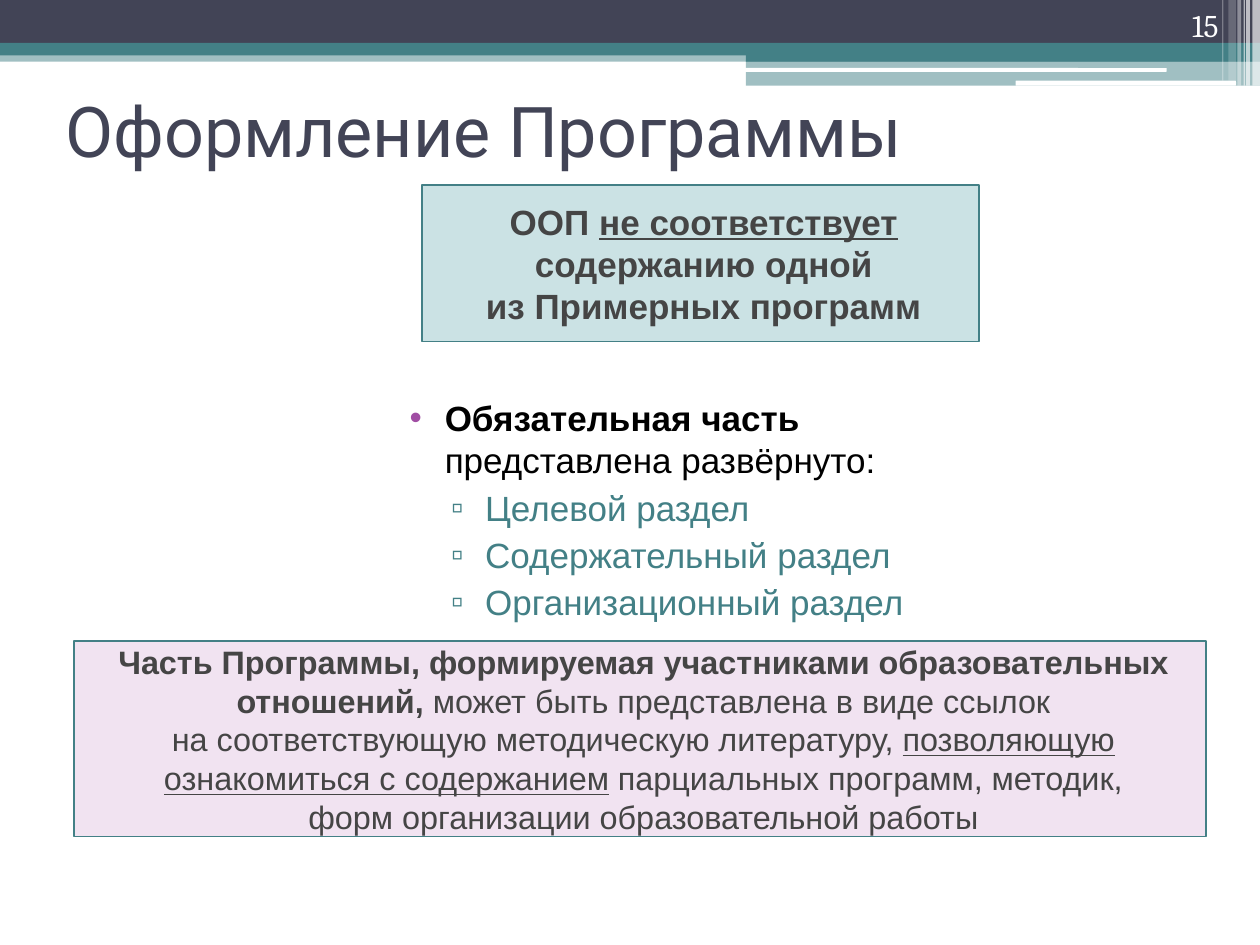
import lxml.etree
import pptx
import pptx.dml.color
import pptx.enum.shapes
import pptx.enum.text
import pptx.oxml.ns
import pptx.util
from pptx.util import Inches

COLORS = {
    "navy": "424456", "teal": "438086", "white": "FFFFFF", "black": "000000",
    "gray": "454545", "purple": "A04DA3", "aqua": "328E97", "lilac": "C991CB",
}
ALIGN = pptx.enum.text.PP_ALIGN
ANCHOR = pptx.enum.text.MSO_ANCHOR
SHAPE = pptx.enum.shapes.MSO_SHAPE

BANDS = [
    (0, 0.4, 10, 0.09, "teal", 50),
    (0, 0, 10, 0.34, "navy", 100),
    (0, 0.34, 10, 0.1, "teal", 100),
    (5.92, 0.39, 4.08, 0.1, "teal", 100),
    (5.92, 0.48, 4.08, 0.2, "teal", 50),
]
PILLS = [(5.91, 0.54, 3.35, 0.03), (8.06, 0.64, 1.75, 0.04)]
STRIPES = [
    (9.94, 0.06, 0.68, 65), (9.89, 0.03, 0.68, 65), (9.87, 0.01, 0.68, 60),
    (9.82, 0.03, 0.68, 40), (9.75, 0.06, 0.64, 20), (9.7, 0.01, 0.64, 30),
]
SECTIONS = ["Целевой раздел", "Содержательный раздел", "Организационный раздел"]


def rgb(color):
    """Return the named colour."""
    return pptx.dml.color.RGBColor.from_string(COLORS[color])


def add_child(parent, tag, **attributes):
    """Append a DrawingML element to its parent."""
    return lxml.etree.SubElement(parent, pptx.oxml.ns.qn(tag), **attributes)


def set_fill(shape, color, opacity=100):
    """Fill a shape with a solid colour of the given opacity."""
    shape.fill.solid()
    shape.fill.fore_color.rgb = rgb(color)
    if opacity < 100:
        value = shape.element.spPr.find(".//" + pptx.oxml.ns.qn("a:srgbClr"))
        add_child(value, "a:alpha", val=str(opacity * 1000))


def place(shape, left, top, width, height):
    """Move and size a shape, in inches."""
    shape.left, shape.top = Inches(left), Inches(top)
    shape.width, shape.height = Inches(width), Inches(height)


def add_band(page, left, top, width, height, color, opacity=100, kind=SHAPE.RECTANGLE):
    """Draw one borderless piece of the header."""
    band = page.shapes.add_shape(
        kind, Inches(left), Inches(top), Inches(width), Inches(height))
    band.shadow.inherit = False
    set_fill(band, color, opacity)
    band.line.fill.background()


def prepare_frame(shape, anchor):
    """Wrap the text of a shape and fix its anchor and size."""
    frame = shape.text_frame
    frame.word_wrap = True
    frame.auto_size = pptx.enum.text.MSO_AUTO_SIZE.NONE
    frame.vertical_anchor = anchor
    return frame


def write(para, spans, size, color, font="Arial", align=ALIGN.LEFT, level=0,
          margin=0, hanging=0, bullet=None, bullet_color=None, before=0):
    """Write (text, bold, underline) spans into a paragraph."""
    para.level = level
    para.alignment = align
    para.space_before = pptx.util.Pt(before)
    properties = para._p.get_or_add_pPr()
    properties.set("marL", str(Inches(margin)))
    properties.set("indent", str(-Inches(hanging)))
    if bullet:
        holder = add_child(properties, "a:buClr")
        add_child(holder, "a:srgbClr", val=COLORS[bullet_color])
        add_child(properties, "a:buFont", typeface="Arial")
        add_child(properties, "a:buChar", char=bullet)
    else:
        add_child(properties, "a:buNone")
    for text, bold, underline in spans:
        for index, line in enumerate(text.split("\n")):
            if index:
                para.add_line_break()
            span = para.add_run()
            span.text = line
            span.font.name = font
            span.font.size = pptx.util.Pt(size)
            span.font.color.rgb = rgb(color)
            span.font.bold = bold
            span.font.underline = underline


def style_callout(box, color, spans, size):
    """Turn a shape into a tinted, outlined callout with centred text."""
    set_fill(box, color, 25)
    box.line.color.rgb = rgb("teal")
    box.line.width = pptx.util.Pt(1)
    frame = prepare_frame(box, ANCHOR.MIDDLE)
    write(frame.paragraphs[0], spans, size, "gray", align=ALIGN.CENTER, margin=0.05)


def add_header(page):
    """Draw the header bands, pills and stripes."""
    for band in BANDS:
        add_band(page, *band)
    for pill in PILLS:
        add_band(page, *pill, "white", kind=SHAPE.ROUNDED_RECTANGLE)
    for left, width, height, opacity in STRIPES:
        add_band(page, left, 0, width, height, "white", opacity)


def add_page_number(page, number):
    """Add the slide number at the top right."""
    box = page.shapes.add_textbox(Inches(8.94), 0, Inches(0.83), Inches(0.4))
    frame = prepare_frame(box, ANCHOR.BOTTOM)
    write(frame.paragraphs[0], [(number, False, False)], 18, "white",
          font="Cambria", align=ALIGN.RIGHT)


def fill_list(body):
    """Write the list of sections of the mandatory part."""
    frame = prepare_frame(body, ANCHOR.TOP)
    write(frame.paragraphs[0],
          [("Обязательная часть ", True, False),
           ("представлена развёрнуто:", False, False)],
          20, "black", margin=0.4, hanging=0.28, bullet="•", bullet_color="purple")
    for section in SECTIONS:
        write(frame.add_paragraph(), [(section, False, False)], 20, "teal", level=1,
              margin=0.72, hanging=0.27, bullet="▫", bullet_color="teal", before=3)


def main():
    """Build and save the slide."""
    deck = pptx.Presentation()
    deck.slide_width, deck.slide_height = Inches(10), Inches(7.5)
    page = deck.slides.add_slide(deck.slide_layouts[3])
    title, body, callout = page.placeholders
    add_header(page)

    place(title, 0.42, 0.44, 9.17, 1.17)
    frame = prepare_frame(title, ANCHOR.MIDDLE)
    write(frame.paragraphs[0], [("Оформление Программы", False, False)], 40, "navy",
          font="Roboto")

    place(body, 3.03, 3.1, 4.42, 1.95)
    fill_list(body)

    place(callout, 3.35, 1.47, 4.42, 1.24)
    style_callout(callout, "aqua", [
        ("ООП ", True, False),
        ("не соответствует ", True, True),
        ("содержанию одной\nиз Примерных программ", True, False),
    ], 20)

    add_page_number(page, "15")

    note = page.shapes.add_shape(
        SHAPE.RECTANGLE, Inches(0.59), Inches(5.09), Inches(8.98), Inches(1.55))
    note.shadow.inherit = False
    style_callout(note, "lilac", [
        ("Часть Программы, формируемая участниками образовательных отношений, ",
         True, False),
        ("может быть представлена в виде ссылок\n"
         "на соответствующую методическую литературу, ", False, False),
        ("позволяющую ознакомиться с содержанием", False, True),
        (" парциальных программ, методик,\n"
         "форм организации образовательной работы", False, False),
    ], 18.5)

    deck.save("out.pptx")


if __name__ == "__main__":
    main()
